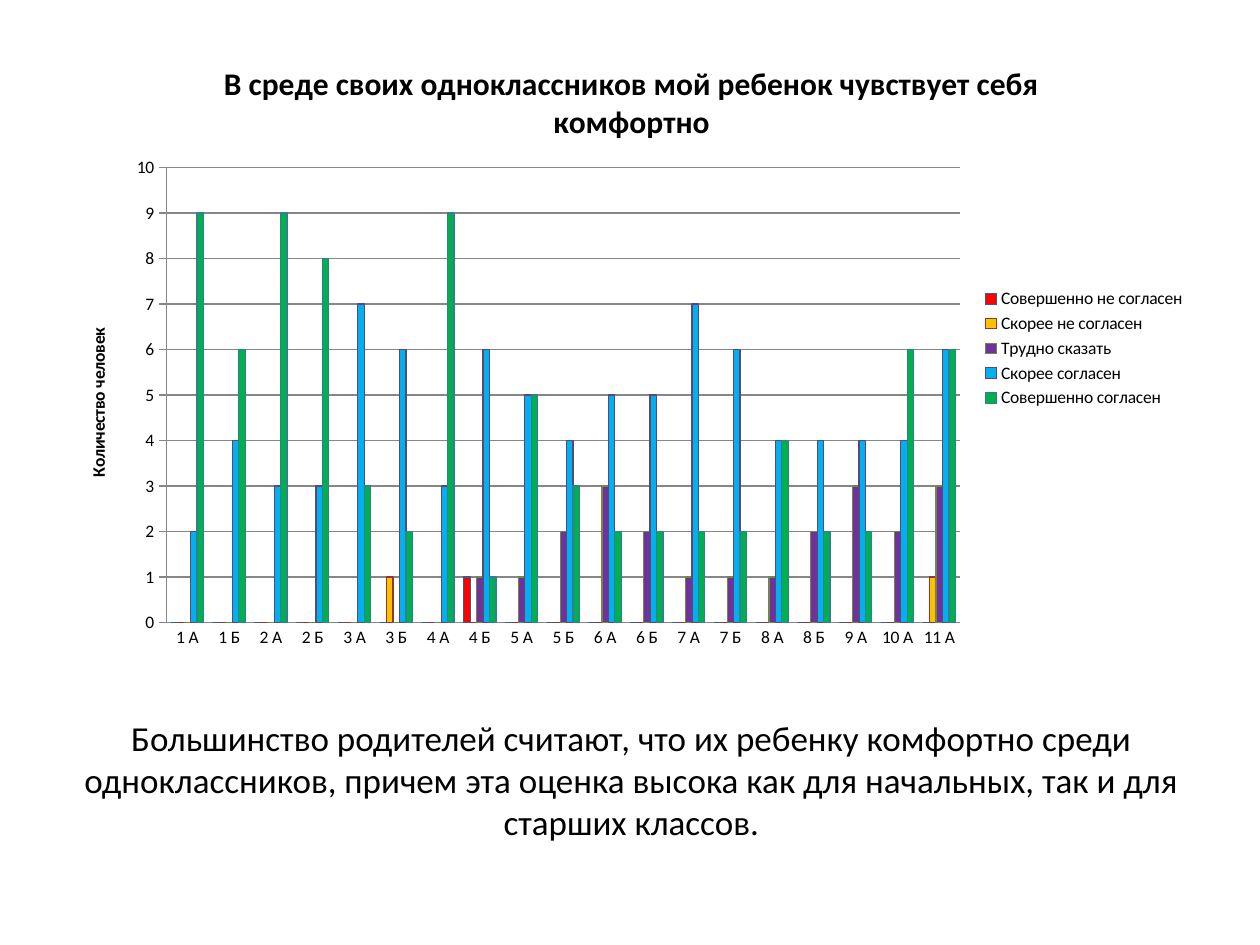
import dataclasses

import pptx
import pptx.chart.data
import pptx.dml.color
import pptx.enum.chart
import pptx.enum.text
import pptx.oxml
import pptx.oxml.ns
import pptx.util

Cm = pptx.util.Cm
Pt = pptx.util.Pt


@dataclasses.dataclass(frozen=True)
class Theme:
    """Hold the font, type sizes and colours."""
    font: str = "Calibri"
    ink: str = "000000"
    grid: str = "868686"
    body: int = 20
    head: int = 18
    label: int = 10
    fills: tuple = ("FF0000", "FFC000", "7030A0", "00B0F0", "00B050")
    edges: tuple = ("385D8A", "8C3836", "71893F", "5C4776", "357D91")


THEME = Theme()
GRADES = ["1 А", "1 Б", "2 А", "2 Б", "3 А", "3 Б", "4 А", "4 Б", "5 А", "5 Б",
          "6 А", "6 Б", "7 А", "7 Б", "8 А", "8 Б", "9 А", "10 А", "11 А"]
VOTES = {
    "Совершенно не согласен": [0, 0, 0, 0, 0, 0, 0, 1, 0, 0, 0, 0, 0, 0, 0, 0, 0, 0, 0],
    "Скорее не согласен": [0, 0, 0, 0, 0, 1, 0, 0, 0, 0, 0, 0, 0, 0, 0, 0, 0, 0, 1],
    "Трудно сказать": [0, 0, 0, 0, 0, 0, 0, 1, 1, 2, 3, 2, 1, 1, 1, 2, 3, 2, 3],
    "Скорее согласен": [2, 4, 3, 3, 7, 6, 3, 6, 5, 4, 5, 5, 7, 6, 4, 4, 4, 4, 6],
    "Совершенно согласен": [9, 6, 9, 8, 3, 2, 9, 1, 5, 3, 2, 2, 2, 2, 4, 2, 2, 6, 6],
}


def tint(code):
    """Turn a hex code into a colour."""
    return pptx.dml.color.RGBColor.from_string(code)


def style(font, size, bold=False):
    """Apply the theme font at a given size."""
    font.name = THEME.font
    font.size = Pt(size)
    font.bold = bold
    font.color.rgb = tint(THEME.ink)


def stroke(line, code):
    """Draw a thin line in one colour."""
    line.color.rgb = tint(code)
    line.width = Pt(0.75)


def label(owner, title, text, size):
    """Give a chart or an axis a bold title."""
    owner.has_title = True
    title.text_frame.text = text
    style(title.text_frame.paragraphs[0].runs[0].font, size, True)


def pin(chart, **box):
    """Fix the inner plot box as fractions of the chart."""
    plot = chart.element.find(".//" + pptx.oxml.ns.qn("c:plotArea"))
    for old in plot.findall(pptx.oxml.ns.qn("c:layout")):
        plot.remove(old)
    rows = "".join(f'<c:{key} val="{val}"/>' for key, val in box.items())
    plot.insert(0, pptx.oxml.parse_xml(
        f'<c:layout {pptx.oxml.ns.nsdecls("c")}><c:manualLayout>'
        '<c:layoutTarget val="inner"/><c:xMode val="edge"/><c:yMode val="edge"/>'
        f'{rows}</c:manualLayout></c:layout>'))


def add_votes(slide, left, top, width, height):
    """Place the column chart of answers by grade."""
    data = pptx.chart.data.CategoryChartData()
    data.categories = GRADES
    for name, counts in VOTES.items():
        data.add_series(name, counts)
    kind = pptx.enum.chart.XL_CHART_TYPE.COLUMN_CLUSTERED
    chart = slide.shapes.add_chart(kind, left, top, width, height, data).chart
    style(chart.font, THEME.label)
    label(chart, chart.chart_title,
          "В среде своих одноклассников мой ребенок чувствует себя комфортно", THEME.head)
    chart.chart_title.include_in_layout = False
    chart.has_legend = True
    chart.legend.position = pptx.enum.chart.XL_LEGEND_POSITION.RIGHT
    chart.legend.include_in_layout = False

    plot = chart.plots[0]
    plot.gap_width = 150
    plot.overlap = 0
    plot.vary_by_categories = False
    for bars, fill, edge in zip(plot.series, THEME.fills, THEME.edges):
        bars.format.fill.solid()
        bars.format.fill.fore_color.rgb = tint(fill)
        stroke(bars.format.line, edge)

    marks = pptx.enum.chart.XL_TICK_MARK
    chart.category_axis.major_tick_mark = marks.NONE
    scale = chart.value_axis
    scale.major_tick_mark = marks.OUTSIDE
    scale.minimum_scale, scale.maximum_scale, scale.major_unit = 0, 10, 1
    scale.has_major_gridlines = True
    label(scale, scale.axis_title, "Количество человек", THEME.label)
    for rule in (chart.category_axis, scale, scale.major_gridlines):
        stroke(rule.format.line, THEME.grid)
    pin(chart, x=0.09, y=0.21, w=0.7, h=0.73)


def add_note(slide, left, top, width, height):
    """Place the centred conclusion."""
    frame = slide.shapes.add_textbox(left, top, width, height).text_frame
    frame.word_wrap = True
    frame.vertical_anchor = pptx.enum.text.MSO_ANCHOR.MIDDLE
    frame.text = ("Большинство родителей считают, что их ребенку комфортно среди "
                  "одноклассников, причем эта оценка высока как для начальных, "
                  "так и для старших классов.")
    line = frame.paragraphs[0]
    line.alignment = pptx.enum.text.PP_ALIGN.CENTER
    style(line.runs[0].font, THEME.body)


def main():
    """Build and save the slide."""
    deck = pptx.Presentation()
    deck.slide_width, deck.slide_height = Cm(25.4), Cm(19.05)
    slide = deck.slides.add_slide(deck.slide_layouts[6])
    left, width = Cm(1.3), Cm(22.86)
    add_note(slide, left, Cm(14.12), width, Cm(3.18))
    add_votes(slide, left, Cm(0.74), width, Cm(12.57))
    deck.save("out.pptx")


if __name__ == "__main__":
    main()
